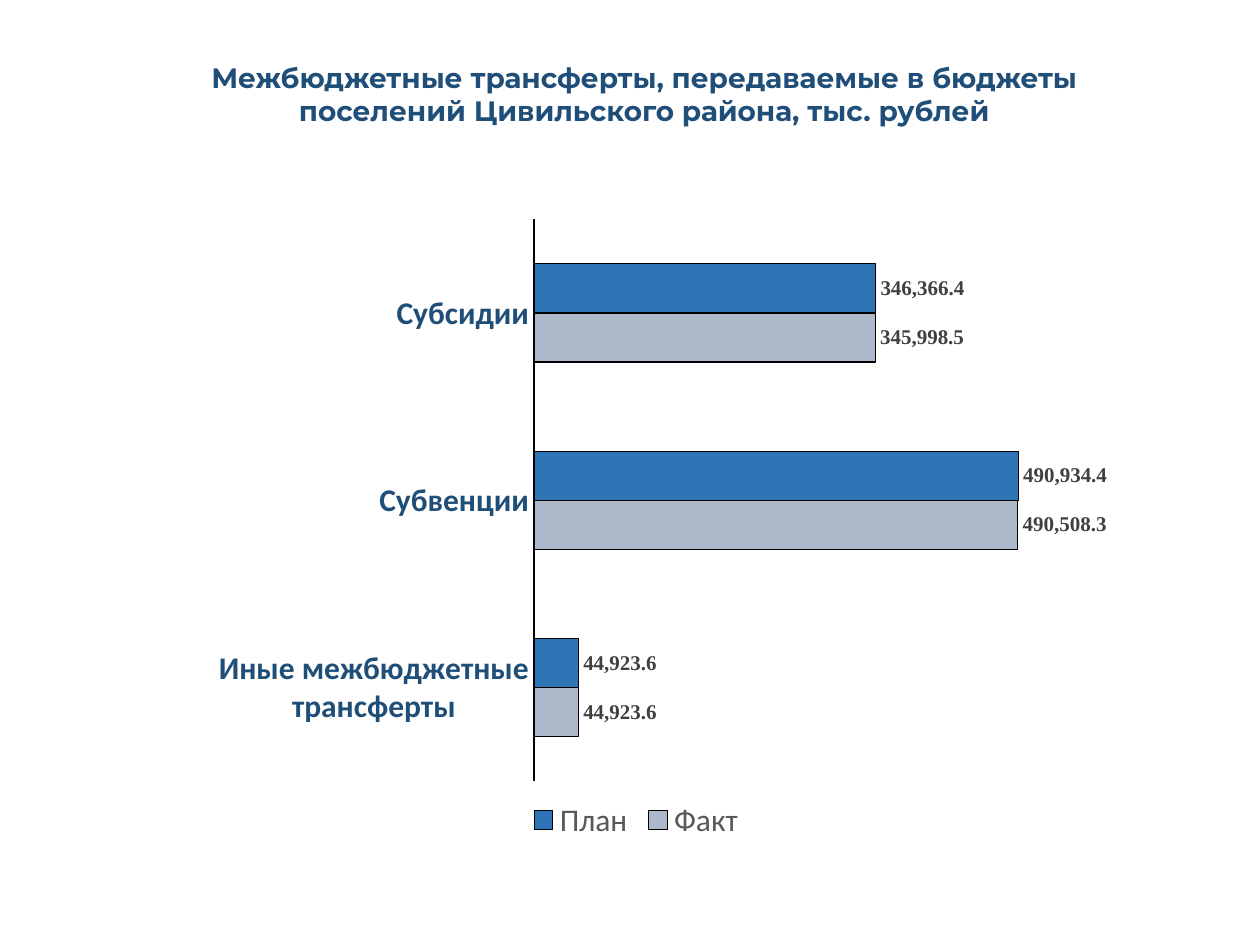
from lxml import etree
from pptx import Presentation
from pptx.chart.data import CategoryChartData
from pptx.dml.color import RGBColor
from pptx.enum.chart import XL_CHART_TYPE as ChartType
from pptx.enum.chart import XL_LABEL_POSITION as LabelPosition
from pptx.enum.chart import XL_LEGEND_POSITION as LegendPosition
from pptx.enum.chart import XL_TICK_MARK as TickMark
from pptx.enum.text import MSO_ANCHOR, PP_ALIGN
from pptx.oxml.ns import qn
from pptx.util import Inches, Pt

COLORS = {
    "heading": "1F4E79",
    "plan": "2E75B6",
    "fact": "ADB9CA",
    "line": "000000",
    "legend": "595959",
    "value": "404040",
}
TITLE = ("Межбюджетные трансферты, передаваемые в бюджеты "
         "поселений Цивильского района, тыс. рублей")
CATEGORIES = ["Иные межбюджетные трансферты", "Субвенции", "Субсидии"]
SERIES = [
    ("Факт", [44923.6, 490508.3, 345998.5], "fact"),
    ("План", [44923.6, 490934.4, 346366.4], "plan"),
]


def rgb(name):
    return RGBColor.from_string(COLORS[name])


def style_font(font, name, size, color, bold=False):
    font.name = name
    font.size = Pt(size)
    font.bold = bold
    font.color.rgb = rgb(color)


def style_line(line):
    line.color.rgb = rgb("line")
    line.width = Pt(0.75)


def make_layout(**settings):
    """Build a manual chart layout from edge modes and fractions of the chart."""
    layout = etree.Element(qn("c:layout"))
    manual = etree.SubElement(layout, qn("c:manualLayout"))
    for tag, value in settings.items():
        etree.SubElement(manual, qn(f"c:{tag}")).set("val", str(value))
    return layout


def place_layout(parent, layout, index):
    for old in parent.findall(qn("c:layout")):
        parent.remove(old)
    parent.insert(index, layout)


def add_title(slide, left, top, width, height):
    title = slide.shapes.title
    title.left, title.top, title.width, title.height = left, top, width, height
    frame = title.text_frame
    frame.text = TITLE
    frame.word_wrap = True
    frame.vertical_anchor = MSO_ANCHOR.MIDDLE
    paragraph = frame.paragraphs[0]
    paragraph.alignment = PP_ALIGN.CENTER
    style_font(paragraph.runs[0].font, "Montserrat", 16, "heading", True)


def format_axes(chart):
    category_axis = chart.category_axis
    category_axis.major_tick_mark = TickMark.NONE
    category_axis.minor_tick_mark = TickMark.NONE
    style_font(category_axis.tick_labels.font, "Calibri", 18, "heading", True)
    style_line(category_axis.format.line)

    value_axis = chart.value_axis
    value_axis.minimum_scale = 0
    value_axis.maximum_scale = 600000
    value_axis.has_major_gridlines = False
    value_axis.visible = False


def format_series(series, color):
    series.format.fill.solid()
    series.format.fill.fore_color.rgb = rgb(color)
    style_line(series.format.line)
    labels = series.data_labels
    labels.show_value = True
    labels.number_format = "#,##0.0"
    labels.number_format_is_linked = False
    labels.position = LabelPosition.OUTSIDE_END
    style_font(labels.font, "Times New Roman", 12, "value", True)


def format_legend(chart):
    chart.has_legend = True
    legend = chart.legend
    legend.position = LegendPosition.BOTTOM
    legend.include_in_layout = False
    style_font(legend.font, "Calibri", 18, "legend")
    element = chart._chartSpace.find(f".//{qn('c:legend')}")
    layout = make_layout(xMode="edge", yMode="edge", x=0.4, y=0.91)
    place_layout(element, layout, 1)


def add_transfers_chart(slide, left, top, width, height):
    data = CategoryChartData(number_format="#,##0.0")
    data.categories = CATEGORIES
    for name, values, _ in SERIES:
        data.add_series(name, values)
    chart = slide.shapes.add_chart(
        ChartType.BAR_CLUSTERED, left, top, width, height, data).chart
    chart.has_title = False
    style_font(chart.font, "Calibri", 10, "line")

    plot = chart.plots[0]
    plot.gap_width = 182
    plot.overlap = 0
    plot.vary_by_categories = False
    for series, (_, _, color) in zip(plot.series, SERIES):
        format_series(series, color)
    format_axes(chart)
    format_legend(chart)

    plot_area = chart._chartSpace.find(f".//{qn('c:plotArea')}")
    layout = make_layout(layoutTarget="inner", xMode="edge", yMode="edge",
                         x=0.41, y=0.04, w=0.57, h=0.85)
    place_layout(plot_area, layout, 0)


def main():
    presentation = Presentation()
    presentation.slide_width = Inches(10)
    presentation.slide_height = Inches(7.5)
    slide = presentation.slides.add_slide(presentation.slide_layouts[0])
    subtitle = slide.placeholders[1].element
    subtitle.getparent().remove(subtitle)

    add_title(slide, Inches(0.94), Inches(0.36), Inches(8.35), Inches(0.77))
    add_transfers_chart(
        slide, Inches(0.86), Inches(1.53), Inches(8.24), Inches(5.25))
    presentation.save("out.pptx")


if __name__ == "__main__":
    main()
